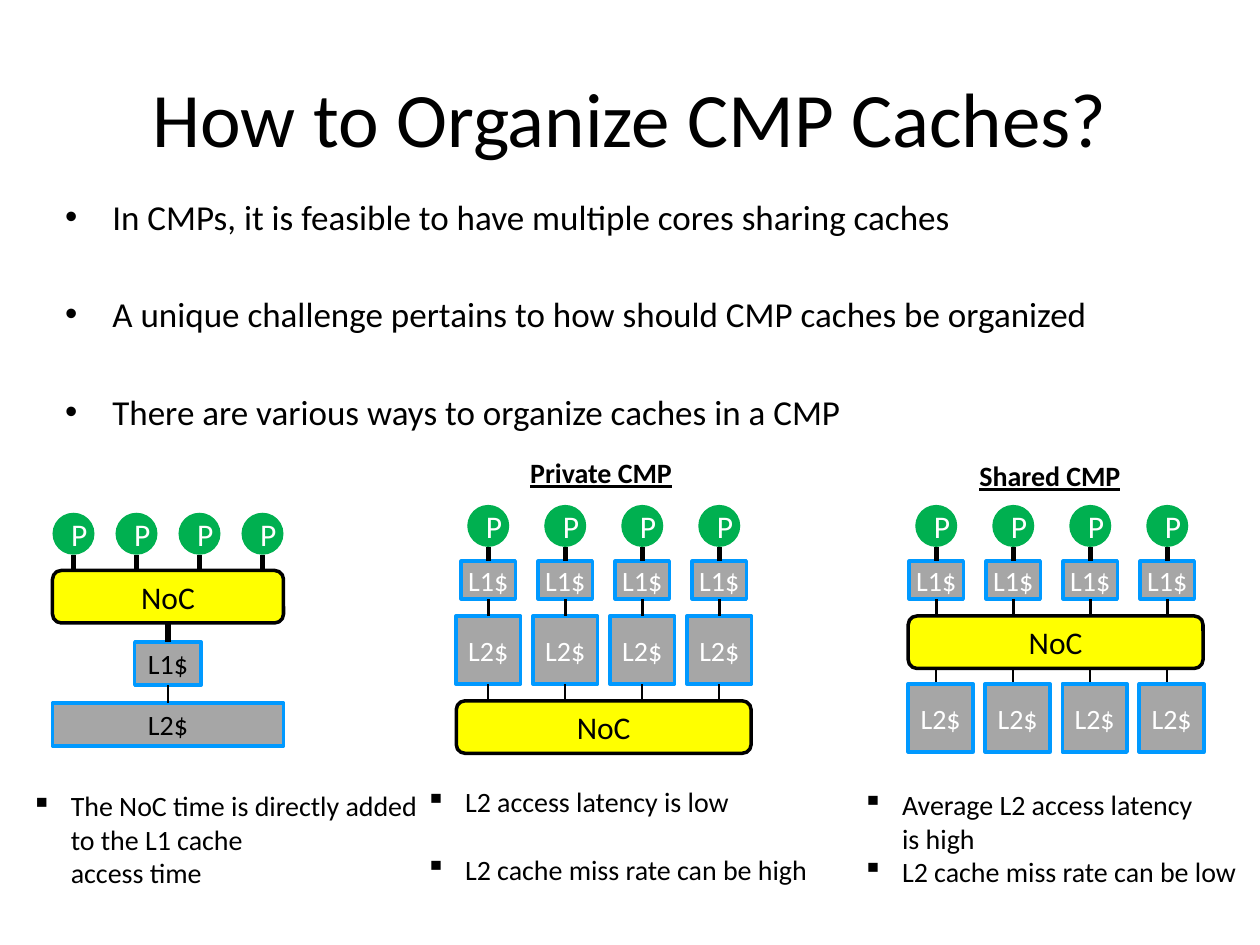
"""Build a slide comparing three cache organizations for chip multiprocessors."""
import dataclasses

import lxml.etree
import pptx
import pptx.dml.color
import pptx.enum.shapes
import pptx.enum.text
import pptx.oxml.ns
import pptx.util

Pt = pptx.util.Pt
SHAPE = pptx.enum.shapes.MSO_SHAPE
ALIGN = pptx.enum.text.PP_ALIGN
ANCHOR = pptx.enum.text.MSO_ANCHOR
AUTO_SIZE = pptx.enum.text.MSO_AUTO_SIZE


@dataclasses.dataclass(frozen=True)
class Theme:
    font: str = "Calibri"
    black: str = "000000"
    white: str = "FFFFFF"
    core: str = "00B050"
    network: str = "FFFF00"
    cache: str = "A6A6A6"
    cache_edge: str = "0099FF"
    title: int = 44
    body: int = 20
    label: int = 18
    small: int = 16


def rgb(value):
    return pptx.dml.color.RGBColor.from_string(value)


def place(sp, left, top, width, height):
    sp.left, sp.top, sp.width, sp.height = Pt(left), Pt(top), Pt(width), Pt(height)


class SlideBuilder:
    def __init__(self, slide, theme):
        self.s = slide
        self.theme = theme

    def format_runs(self, p, size, color, heading=False):
        for r in p.runs:
            r.font.name = self.theme.font
            r.font.size = Pt(size)
            r.font.color.rgb = rgb(color)
            if heading:
                r.font.bold = r.font.underline = True

    def title(self, text, box):
        sp = self.s.shapes.title
        place(sp, *box)
        tf = sp.text_frame
        tf.text = text
        tf.vertical_anchor = ANCHOR.MIDDLE
        self.format_runs(tf.paragraphs[0], self.theme.title, self.theme.black)

    def fill_list(self, tf, items, size, gap):
        for i, item in enumerate(items):
            p = tf.add_paragraph() if i else tf.paragraphs[0]
            p.text = item
            if i:
                p.space_before = Pt(gap)
            self.format_runs(p, size, self.theme.black)

    def body(self, items, box, gap):
        sp = self.s.placeholders[1]
        place(sp, *box)
        sp.text_frame.auto_size = AUTO_SIZE.NONE
        self.fill_list(sp.text_frame, items, self.theme.body, gap)

    def bullets(self, items, box, gap=0):
        tf = self.s.shapes.add_textbox(*map(Pt, box)).text_frame
        tf.word_wrap = True
        tf.margin_left = tf.margin_top = tf.margin_right = tf.margin_bottom = 0
        self.fill_list(tf, items, self.theme.small, gap)
        for p in tf.paragraphs:
            pPr = p._p.get_or_add_pPr()
            pPr.set("marL", str(Pt(22.5)))
            pPr.set("indent", str(-Pt(22.5)))
            bullet = lxml.etree.SubElement(pPr, pptx.oxml.ns.qn("a:buChar"))
            bullet.set("char", "▪")

    def heading(self, text, box):
        tf = self.s.shapes.add_textbox(*map(Pt, box)).text_frame
        tf.word_wrap = True
        tf.text = text
        p = tf.paragraphs[0]
        p.alignment = ALIGN.CENTER
        self.format_runs(p, self.theme.small, self.theme.black, heading=True)

    def shape(self, kind, text, box, fill, edge, size, color):
        sp = self.s.shapes.add_shape(kind, *map(Pt, box))
        sp.shadow.inherit = False
        sp.fill.solid()
        sp.fill.fore_color.rgb = rgb(fill)
        if edge:
            sp.line.color.rgb = rgb(edge)
            sp.line.width = Pt(2)
        else:
            sp.line.fill.background()
        tf = sp.text_frame
        tf.text = text
        tf.vertical_anchor = ANCHOR.MIDDLE
        tf.paragraphs[0].alignment = ALIGN.CENTER
        self.format_runs(tf.paragraphs[0], size, color)
        return sp

    def core(self, center, top):
        t = self.theme
        return self.shape(SHAPE.OVAL, "P", (center - 12, top, 24, 24),
                          t.core, None, t.label, t.white)

    def network(self, left, top, width):
        t = self.theme
        return self.shape(SHAPE.ROUNDED_RECTANGLE, "NoC", (left, top, width, 30),
                          t.network, t.black, t.label, t.black)

    def cache(self, text, center, top, width, height, color):
        t = self.theme
        sp = self.shape(SHAPE.RECTANGLE, text, (center - width / 2, top, width, height),
                        t.cache, t.cache_edge, t.small, color)
        sp.text_frame.margin_left = sp.text_frame.margin_right = 0
        return sp

    def link(self, x, top, bottom, weight, above=None, below=None):
        c = self.s.shapes.add_connector(
            pptx.enum.shapes.MSO_CONNECTOR.STRAIGHT, Pt(x), Pt(top), Pt(x), Pt(bottom))
        c.line.color.rgb = rgb(self.theme.black)
        c.line.width = Pt(weight)
        lxml.etree.SubElement(c._element.spPr, pptx.oxml.ns.qn("a:effectLst"))
        if above is not None:
            c.begin_connect(above, 2)
        if below is not None:
            c.end_connect(below, 0)

    def core_with_l1(self, x):
        self.core(x, 288.5)
        l1 = self.cache("L1$", x, 320.75, 31, 21.5, self.theme.white)
        self.link(x, 312.5, 320.75, 3, below=l1)
        return l1

    def l2(self, x, top):
        return self.cache("L2$", x, top, 37, 39, self.theme.white)

    def shared_l1(self):
        noc = self.network(30, 326, 132)
        for i in range(4):
            x = 42 + 36 * i
            self.core(x, 293)
            self.link(x, 317, 325, 3)
        l1 = self.cache("L1$", 96, 367, 38, 24.5, self.theme.black)
        l2 = self.cache("L2$", 96, 401.75, 132, 24.5, self.theme.black)
        self.link(96, 356, 367, 3, noc, l1)
        self.link(96, 391.5, 401.75, 1.5, l1, l2)

    def private_l2(self):
        self.network(260.75, 400.5, 168.5)
        for i in range(4):
            x = 279 + 44 * i
            l1 = self.core_with_l1(x)
            l2 = self.l2(x, 352)
            self.link(x, 342.25, 352, 1.5, l1, l2)
            self.link(x, 391, 400.5, 1, above=l2)

    def shared_l2(self):
        self.network(519, 352, 168.5)
        for i in range(4):
            x = 535 + 44 * i
            l1 = self.core_with_l1(x)
            self.link(x, 342.25, 352, 1.5, above=l1)
            self.l2(x + 2.5, 390.75)
            self.link(x, 382, 390, 1)


def main():
    prs = pptx.Presentation()
    prs.slide_width, prs.slide_height = Pt(720), Pt(540)
    b = SlideBuilder(prs.slides.add_slide(prs.slide_layouts[1]), Theme())
    b.title("How to Organize CMP Caches?", (36, 21.6, 648, 90))
    b.body(["In CMPs, it is feasible to have multiple cores sharing caches",
            "A unique challenge pertains to how should CMP caches be organized",
            "There are various ways to organize caches in a CMP"],
           (30, 108, 666, 402), 31.75)
    b.shared_l1()
    b.private_l2()
    b.shared_l2()
    b.heading("Private CMP", (260.75, 257, 165.5, 26.5))
    b.heading("Shared CMP", (540, 258.5, 120, 26.5))
    b.bullets(["The NoC time is directly added to the L1 cache \vaccess time"],
              (18, 450.75, 222, 78))
    b.bullets(["L2 access latency is low", "L2 cache miss rate can be high"],
              (243.25, 448.5, 223, 58), 19.5)
    b.bullets(["Average L2 access latency \vis high", "L2 cache miss rate can be low"],
              (493, 450, 227, 58))
    prs.save("out.pptx")


if __name__ == "__main__":
    main()
